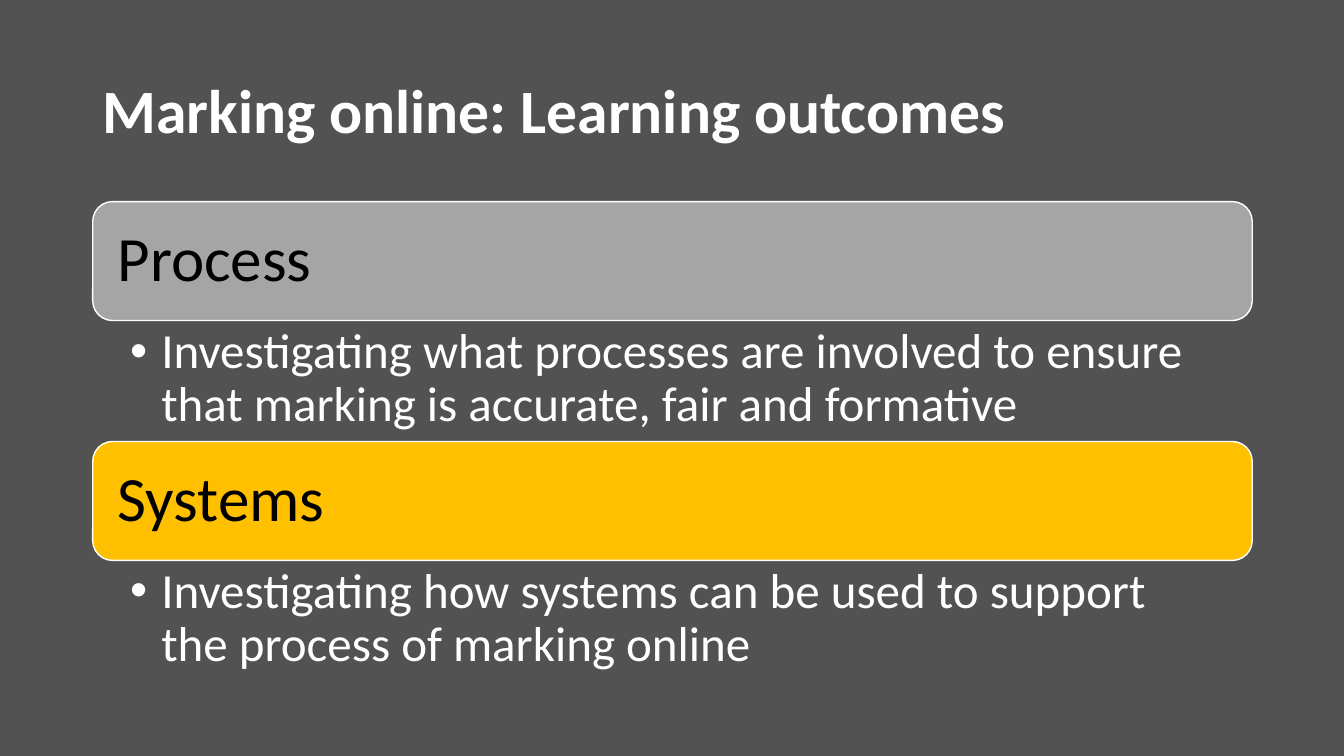
from lxml import etree
from pptx import Presentation
from pptx import util as u
from pptx.dml.color import RGBColor
from pptx.enum import shapes, text
from pptx.oxml.ns import qn

TITLE = "Marking online: Learning outcomes"
OUTCOMES = [
    ("Process", "grey",
     "Investigating what processes are involved to ensure that marking is accurate, fair and formative"),
    ("Systems", "gold",
     "Investigating how systems can be used to support the process of marking online"),
]
COLOURS = {"back": "525252", "white": "FFFFFF", "black": "000000",
           "grey": "A5A5A5", "gold": "FFC000"}

WIDTH, HEIGHT = 13.33, 7.5
LEFT, COLUMN = 0.92, 11.5
TITLE_TOP, TITLE_H = 0.4, 1.45
FIRST_TOP, BAR_H, DETAIL_H = 2, 1.18, 1.2
INDENT = 0.31

TITLE_FORMAT = {"size": u.Pt(44), "bold": True}
BAR_FORMAT = {"size": u.Pt(45)}
DETAIL_FORMAT = {"size": u.Pt(35)}


def rgb(name):
    return RGBColor.from_string(COLOURS[name])


def write(sp, words, colour, font, insets, anchor):
    """Fill a shape with one left-aligned paragraph; insets are left, top, right, bottom."""
    tf = sp.text_frame
    tf.word_wrap = True
    tf.vertical_anchor = anchor
    for side, inset in zip(("left", "top", "right", "bottom"), insets):
        setattr(tf, f"margin_{side}", u.Inches(inset))
    p = tf.paragraphs[0]
    p.alignment = text.PP_ALIGN.LEFT
    p.line_spacing = 0.9
    r = p.add_run()
    r.text = words
    for name, value in {"name": "Calibri", **font}.items():
        setattr(r.font, name, value)
    r.font.color.rgb = rgb(colour)
    return p


def add_bullet(p):
    pPr = p._p.get_or_add_pPr()
    pPr.set("marL", str(u.Inches(INDENT)))
    pPr.set("indent", str(-u.Inches(INDENT)))
    etree.SubElement(pPr, qn("a:buFont")).set("typeface", "Arial")
    etree.SubElement(pPr, qn("a:buChar")).set("char", "•")


def box(top, height):
    return [u.Inches(v) for v in (LEFT, top, COLUMN, height)]


def main():
    prs = Presentation()
    prs.slide_width, prs.slide_height = u.Inches(WIDTH), u.Inches(HEIGHT)
    s = prs.slides.add_slide(prs.slide_layouts[6])
    s.background.fill.solid()
    s.background.fill.fore_color.rgb = rgb("back")

    title = s.shapes.add_textbox(*box(TITLE_TOP, TITLE_H))
    write(title, TITLE, "white", TITLE_FORMAT, (0.1, 0.05, 0.1, 0.05), text.MSO_ANCHOR.MIDDLE)

    for i, (heading, fill, detail) in enumerate(OUTCOMES):
        top = FIRST_TOP + i * (BAR_H + DETAIL_H)
        bar = s.shapes.add_shape(shapes.MSO_SHAPE.ROUNDED_RECTANGLE, *box(top, BAR_H))
        bar.shadow.inherit = False
        bar.fill.solid()
        bar.fill.fore_color.rgb = rgb(fill)
        bar.line.color.rgb = rgb("white")
        bar.line.width = u.Pt(1)
        # The rounded corners already add about 0.06 inch to each inset.
        write(bar, heading, "black", BAR_FORMAT, (0.19,) * 4, text.MSO_ANCHOR.MIDDLE)

        note = s.shapes.add_textbox(*box(top + BAR_H, DETAIL_H))
        add_bullet(write(note, detail, "white", DETAIL_FORMAT,
                         (0.37, 0.06, 0.35, 0.06), text.MSO_ANCHOR.TOP))

    prs.save("out.pptx")


if __name__ == "__main__":
    main()
